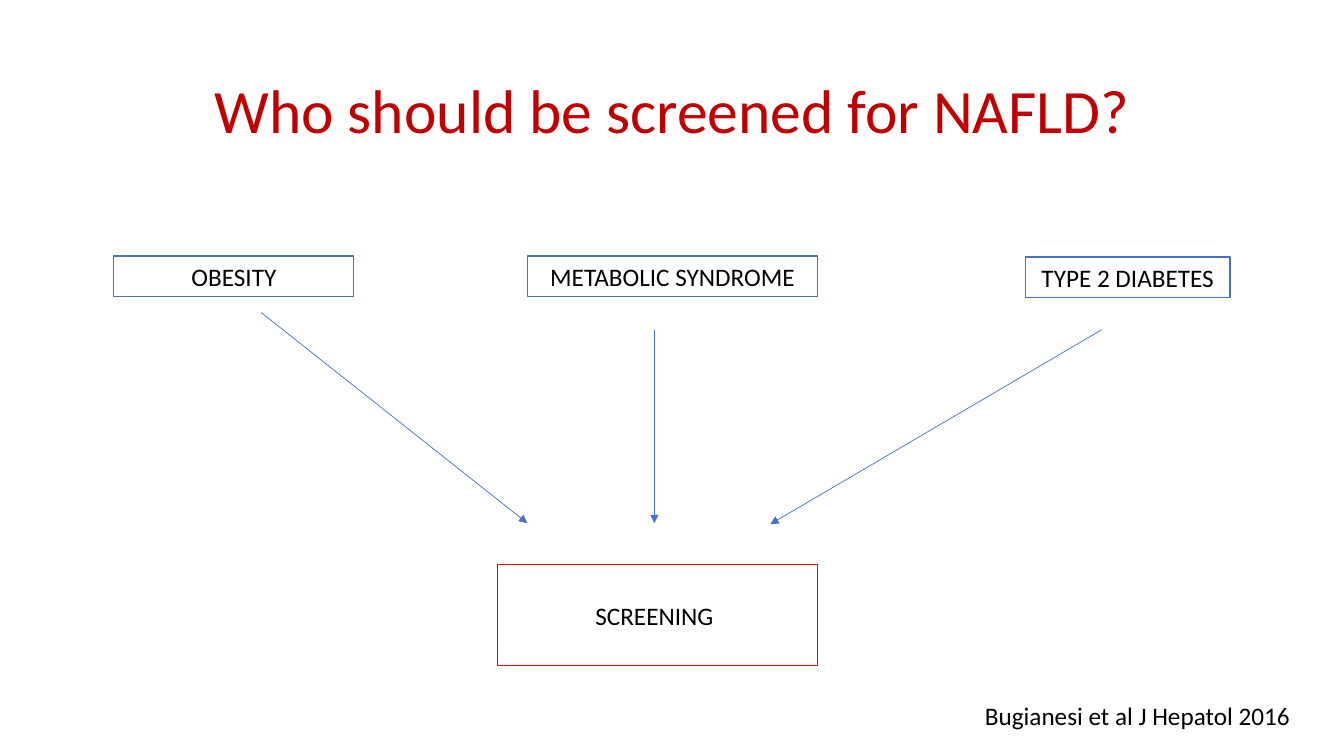
import pptx
import pptx.util
import pptx.dml.color
import pptx.enum.shapes
import pptx.enum.text
import pptx.oxml
import pptx.oxml.ns
import lxml.etree

Inches = pptx.util.Inches
Pt = pptx.util.Pt
ALIGN = pptx.enum.text.PP_ALIGN
ANCHOR = pptx.enum.text.MSO_ANCHOR
COLORS = {"title": "C00000", "text": "000000", "blue": "4472C4", "red": "FF0000"}


def color(name):
    return pptx.dml.color.RGBColor.from_string(COLORS[name])


def write(shape, text, size=18, tint="text", align=ALIGN.CENTER, anchor=ANCHOR.TOP):
    frame = shape.text_frame
    frame.word_wrap = True
    frame.vertical_anchor = anchor
    para = frame.paragraphs[0]
    para.alignment = align
    run = para.add_run()
    run.text = text
    run.font.name = "Calibri"
    run.font.size = Pt(size)
    run.font.color.rgb = color(tint)
    return para


def label(slide, area, text, **style):
    box = slide.shapes.add_textbox(*map(Inches, area))
    return write(box, text, **style)


def frame(slide, area, tint):
    """Add an unfilled rectangle with a thin outline."""
    rect = slide.shapes.add_shape(
        pptx.enum.shapes.MSO_SHAPE.RECTANGLE, *map(Inches, area))
    rect.shadow.inherit = False
    rect.fill.background()
    rect.line.color.rgb = color(tint)
    rect.line.width = Pt(0.75)
    return rect


def arrow(slide, start, end):
    line = slide.shapes.add_connector(
        pptx.enum.shapes.MSO_CONNECTOR.STRAIGHT, *map(Inches, start + end))
    line.line.color.rgb = color("blue")
    line.line.width = Pt(0.5)
    qn = pptx.oxml.ns.qn
    tip = lxml.etree.SubElement(line.line._get_or_add_ln(), qn("a:tailEnd"))
    tip.set("type", "triangle")
    lxml.etree.SubElement(line._element.spPr, qn("a:effectLst"))


def main():
    deck = pptx.Presentation()
    deck.slide_width = Inches(13.33)
    deck.slide_height = Inches(7.5)
    slide = deck.slides.add_slide(deck.slide_layouts[6])

    title = label(slide, (0.92, 0.4, 11.5, 1.45), "Who should be screened for NAFLD?",
                  size=44, tint="title", anchor=ANCHOR.MIDDLE)
    title.line_spacing = 0.9

    risks = [
        ("OBESITY", (1.13, 2.54, 2.38, 0.4), (2.59, 3.1), (5.23, 5.19)),
        ("METABOLIC SYNDROME", (5.23, 2.54, 2.88, 0.4), (6.49, 3.27), (6.49, 5.19)),
        ("TYPE 2 DIABETES", (10.17, 2.55, 2.03, 0.4), (10.93, 3.27), (7.64, 5.2)),
    ]
    for name, area, start, end in risks:
        write(frame(slide, area, "blue"), name)
        arrow(slide, start, end)

    frame(slide, (4.93, 5.6, 3.18, 1), "red")
    label(slide, (4.2, 5.91, 4.58, 0.4), "SCREENING")
    label(slide, (9.67, 6.9, 4.08, 0.4), "Bugianesi et al J Hepatol 2016",
          align=ALIGN.LEFT)
    deck.save("out.pptx")


if __name__ == "__main__":
    main()
